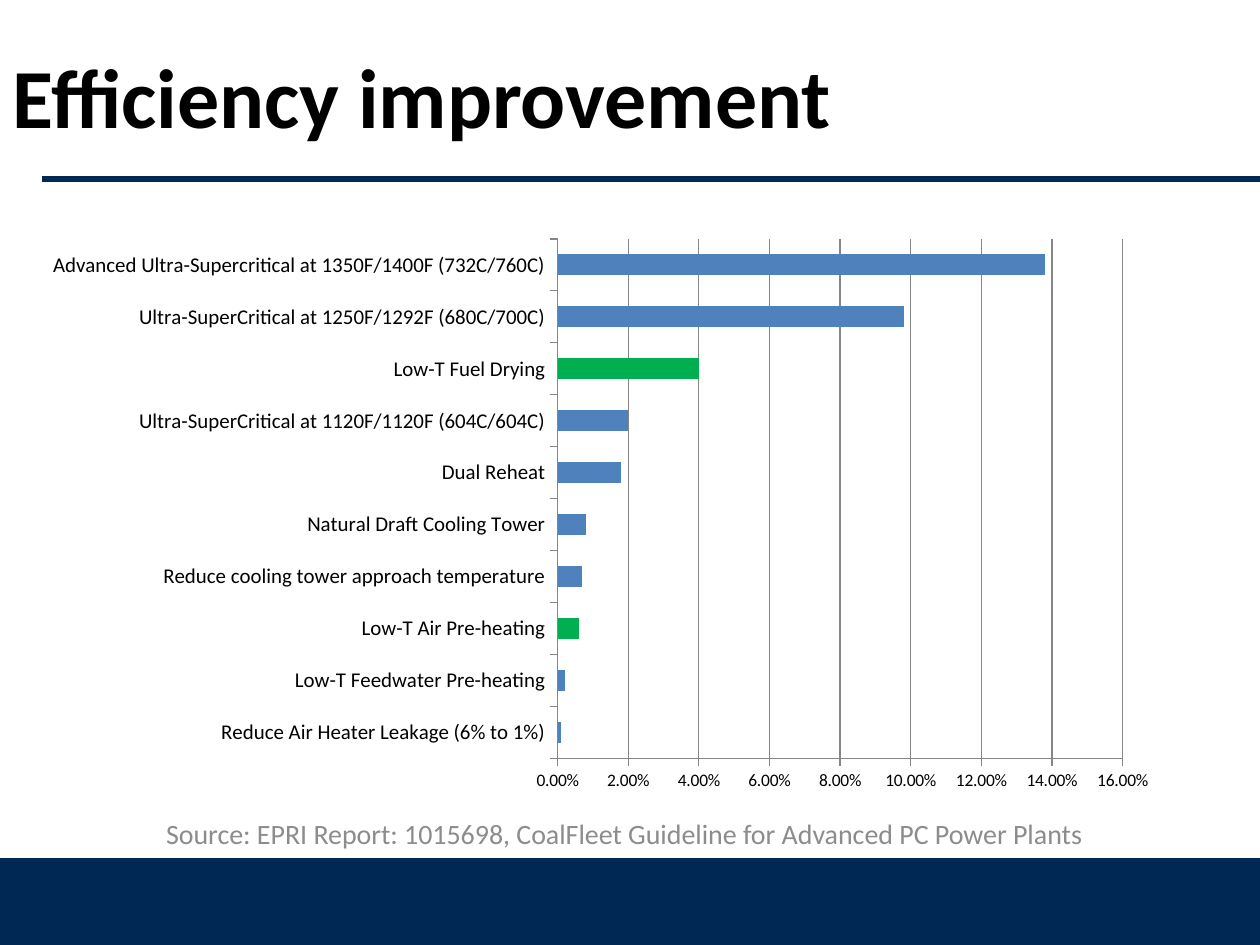
"""Build the efficiency improvement slide with its bar chart of measures."""
from dataclasses import dataclass

from lxml.etree import SubElement
from pptx import Presentation
from pptx.chart.data import CategoryChartData
from pptx.dml.color import RGBColor
from pptx.enum.chart import XL_CHART_TYPE as ChartType, XL_TICK_MARK as Tick
from pptx.enum.shapes import MSO_CONNECTOR as Connector, MSO_SHAPE as Preset
from pptx.enum.text import MSO_ANCHOR as Anchor, PP_ALIGN as Align
from pptx.oxml import parse_xml
from pptx.oxml.ns import nsdecls, qn
from pptx.util import Emu, Pt

FONT = "Calibri"
PX_PER_INCH = 126
WIDTH, HEIGHT = 1260, 945
COLORS = {
    "navy": "002855",
    "black": "000000",
    "source": "8C8C8C",
    "bar": "4F81BD",
    "highlight": "00B050",
    "axis": "868686",
}
PLOT = {"x": 0.442, "y": 0.048, "w": 0.501, "h": 0.833}


@dataclass(frozen=True)
class Box:
    left: int
    top: int
    width: int
    height: int


@dataclass(frozen=True)
class Caption:
    text: str
    box: Box
    size: int
    color: str
    align: Align
    bold: bool = False


@dataclass(frozen=True)
class Measure:
    name: str
    gain: float
    color: str = "bar"


CAPTIONS = [
    Caption("Efficiency improvement", Box(0, 0, WIDTH, 189), 48, "black", Align.LEFT, True),
    Caption(
        "Source: EPRI Report: 1015698, CoalFleet Guideline for Advanced PC Power Plants",
        Box(42, 809, 1165, 49), 16, "source", Align.CENTER,
    ),
]
MEASURES = [
    Measure("Reduce Air Heater Leakage (6% to 1%)", 0.001),
    Measure("Low-T Feedwater Pre-heating", 0.002),
    Measure("Low-T Air Pre-heating", 0.006, "highlight"),
    Measure("Reduce cooling tower approach temperature", 0.007),
    Measure("Natural Draft Cooling Tower", 0.008),
    Measure("Dual Reheat", 0.018),
    Measure("Ultra-SuperCritical at 1120F/1120F (604C/604C)", 0.02),
    Measure("Low-T Fuel Drying", 0.04, "highlight"),
    Measure("Ultra-SuperCritical at 1250F/1292F (680C/700C)", 0.098),
    Measure("Advanced Ultra-Supercritical at 1350F/1400F (732C/760C)", 0.138),
]


def px(length: int) -> Emu:
    return Emu(round(length * 914400 / PX_PER_INCH))


def place(box: Box) -> tuple[Emu, Emu, Emu, Emu]:
    return px(box.left), px(box.top), px(box.width), px(box.height)


def rgb(name: str) -> RGBColor:
    return RGBColor.from_string(COLORS[name])


def style_font(font, size: int, color: str, bold: bool = False) -> None:
    font.name, font.size, font.bold = FONT, Pt(size), bold
    font.color.rgb = rgb(color)


def style_line(line, color: str, width: float) -> None:
    line.color.rgb = rgb(color)
    line.width = Pt(width)


def draw_footer_band(slide, box: Box) -> None:
    band = slide.shapes.add_shape(Preset.RECTANGLE, *place(box))
    band.shadow.inherit = False
    band.fill.solid()
    band.fill.fore_color.rgb = rgb("navy")
    style_line(band.line, "navy", 2)


def draw_title_rule(slide, left: int, right: int, y: int) -> None:
    rule = slide.shapes.add_connector(Connector.STRAIGHT, px(left), px(y), px(right), px(y))
    style_line(rule.line, "navy", 3)
    SubElement(rule._element.spPr, qn("a:effectLst"))


def draw_caption(slide, caption: Caption) -> None:
    frame = slide.shapes.add_textbox(*place(caption.box)).text_frame
    frame.word_wrap = True
    frame.vertical_anchor = Anchor.MIDDLE
    paragraph = frame.paragraphs[0]
    paragraph.text = caption.text
    paragraph.alignment = caption.align
    style_font(paragraph.font, caption.size, caption.color, caption.bold)


def fix_plot_area(chart) -> None:
    plot_area = chart._chartSpace.chart.plotArea
    for layout in plot_area.findall(qn("c:layout")):
        plot_area.remove(layout)
    sizes = "".join(f'<c:{side} val="{share}"/>' for side, share in PLOT.items())
    plot_area.insert(0, parse_xml(
        f'<c:layout {nsdecls("c")}><c:manualLayout><c:layoutTarget val="inner"/>'
        f'<c:xMode val="edge"/><c:yMode val="edge"/>{sizes}</c:manualLayout></c:layout>'
    ))


def draw_chart(slide, measures: list[Measure], box: Box) -> None:
    data = CategoryChartData(number_format="0.00%")
    data.categories = [measure.name for measure in measures]
    data.add_series("Series 1", [measure.gain for measure in measures])
    chart = slide.shapes.add_chart(ChartType.BAR_CLUSTERED, *place(box), data).chart
    chart.has_title = False
    chart.has_legend = False
    style_font(chart.font, 10, "black")
    fix_plot_area(chart)

    for axis, size in ((chart.category_axis, 12), (chart.value_axis, 10)):
        axis.major_tick_mark = Tick.OUTSIDE
        axis.minor_tick_mark = Tick.NONE
        style_font(axis.tick_labels.font, size, "black")
        style_line(axis.format.line, "axis", 0.75)

    gains = chart.value_axis
    gains.minimum_scale, gains.maximum_scale, gains.major_unit = 0, 0.16, 0.02
    gains.has_major_gridlines = True
    style_line(gains.major_gridlines.format.line, "axis", 0.75)
    gains.tick_labels.number_format = "0.00%"
    gains.tick_labels.number_format_is_linked = False

    bars = chart.plots[0]
    bars.gap_width = 150
    bars.vary_by_categories = False
    series = bars.series[0]
    series.format.fill.solid()
    series.format.fill.fore_color.rgb = rgb("bar")
    for index, measure in enumerate(measures):
        if measure.color != "bar":
            fill = series.points[index].format.fill
            fill.solid()
            fill.fore_color.rgb = rgb(measure.color)


def main() -> None:
    deck = Presentation()
    deck.slide_width, deck.slide_height = px(WIDTH), px(HEIGHT)
    slide = deck.slides.add_slide(deck.slide_layouts[6])
    draw_footer_band(slide, Box(0, 860, WIDTH, 85))
    draw_title_rule(slide, 42, WIDTH, 179)
    title, source = CAPTIONS
    draw_caption(slide, title)
    draw_chart(slide, MEASURES, Box(53, 209, 1134, 624))
    draw_caption(slide, source)
    deck.save("out.pptx")


if __name__ == "__main__":
    main()
